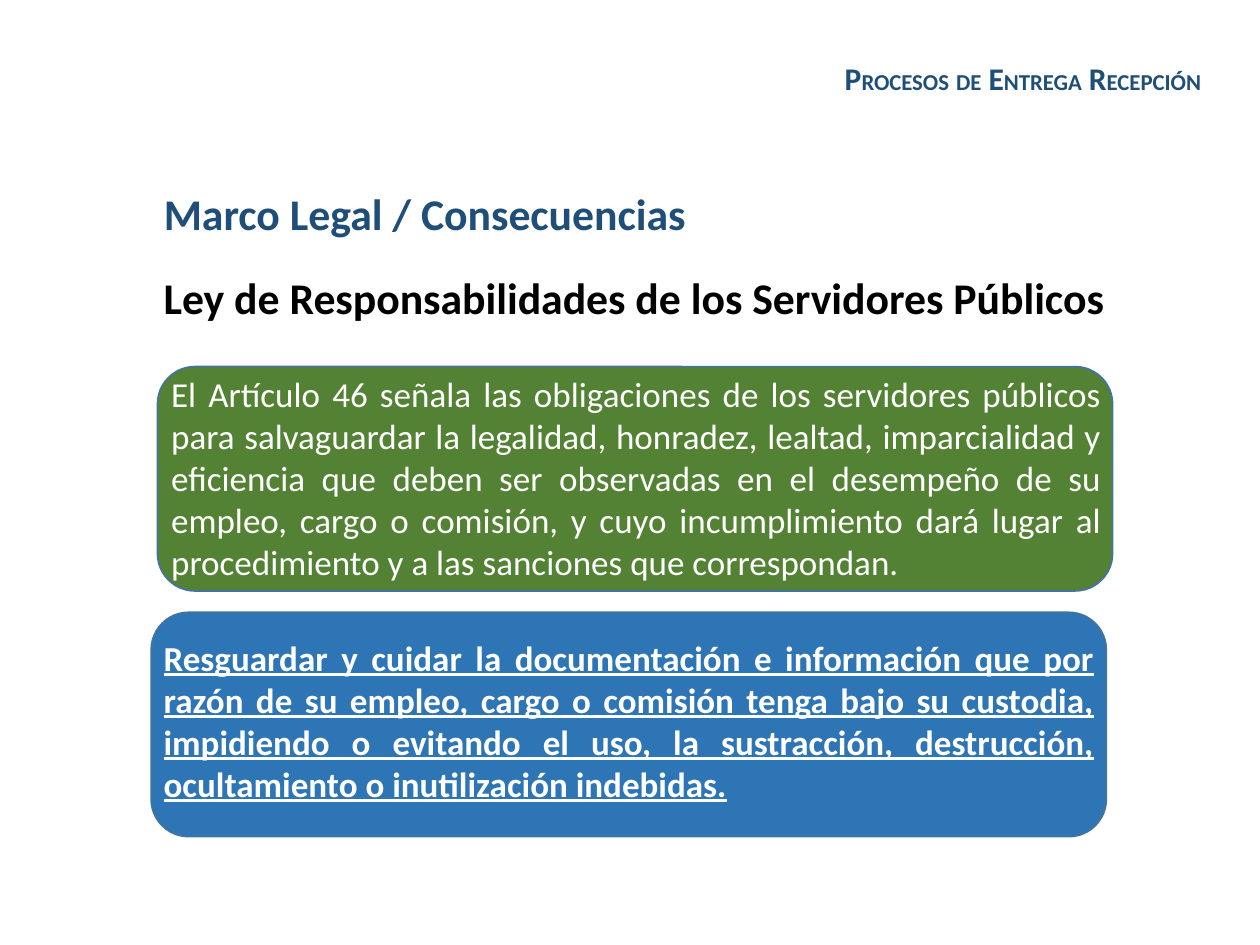
from itertools import groupby

from pptx import Presentation
from pptx.dml.color import RGBColor
from pptx.enum.shapes import MSO_SHAPE
from pptx.enum.text import MSO_ANCHOR, MSO_AUTO_SIZE, PP_ALIGN
from pptx.util import Inches, Pt

ROUNDED = MSO_SHAPE.ROUNDED_RECTANGLE
TOP = MSO_ANCHOR.TOP
FIXED = MSO_AUTO_SIZE.NONE
LEFT, RIGHT, JUSTIFY = PP_ALIGN.LEFT, PP_ALIGN.RIGHT, PP_ALIGN.JUSTIFY

WIDTH, HEIGHT = 10, 7.5
TITLE_ONLY = 5
NAVY, BLACK, WHITE = "1F4E79", "000000", "FFFFFF"
GREEN, BLUE, OUTLINE = "548235", "2E75B6", "43739E"
PANEL_W, PANEL_H = 7.58 / WIDTH, 1.78 / HEIGHT
MARGIN = 0.12

ARTICLE = (
    "El Artículo 46 señala las obligaciones de los servidores públicos para "
    "salvaguardar la legalidad, honradez, lealtad, imparcialidad y eficiencia "
    "que deben ser observadas en el desempeño de su empleo, cargo o comisión, "
    "y cuyo incumplimiento dará lugar al procedimiento y a las sanciones que "
    "correspondan."
)
DUTY = (
    "Resguardar y cuidar la documentación e información que por razón de su "
    "empleo, cargo o comisión tenga bajo su custodia, impidiendo o evitando "
    "el uso, la sustracción, destrucción, ocultamiento o inutilización "
    "indebidas."
)


def color(hex_code):
    return RGBColor.from_string(hex_code)


class LegalSlide:
    """Style and current slide; boxes are (left, top, width, height) shares."""

    font_name = "Calibri"

    def __init__(self, deck):
        self.slide = deck.slides.add_slide(deck.slide_layouts[TITLE_ONLY])

    def place(self, box):
        left, top, width, height = box
        return (Inches(left * WIDTH), Inches(top * HEIGHT),
                Inches(width * WIDTH), Inches(height * HEIGHT))

    def style(self, run, size, hex_code, bold, underline=False):
        font = run.font
        font.name, font.size = self.font_name, Pt(size)
        font.bold, font.underline = bold, underline
        font.color.rgb = color(hex_code)

    def prepare(self, frame, align):
        frame.word_wrap = True
        frame.auto_size = FIXED
        frame.vertical_anchor = TOP
        frame.paragraphs[0].alignment = align

    def title(self, box, text):
        heading = self.slide.shapes.title
        heading.left, heading.top, heading.width, heading.height = self.place(box)
        heading.text_frame.text = text
        self.prepare(heading.text_frame, LEFT)
        self.style(heading.text_frame.paragraphs[0].runs[0], 25, NAVY, True)

    def text(self, box, text, size, hex_code, align=LEFT, bold=False, underline=False):
        frame = self.slide.shapes.add_textbox(*self.place(box)).text_frame
        frame.text = text
        self.prepare(frame, align)
        self.style(frame.paragraphs[0].runs[0], size, hex_code, bold, underline)

    def small_caps(self, box, text, big, small):
        """Capitals and spaces in the big size, other letters as small capitals."""
        frame = self.slide.shapes.add_textbox(*self.place(box)).text_frame
        self.prepare(frame, RIGHT)
        for is_small, letters in groupby(text, str.islower):
            run = frame.paragraphs[0].add_run()
            run.text = "".join(letters).upper()
            self.style(run, small if is_small else big, NAVY, True)

    def panel(self, box, fill):
        panel = self.slide.shapes.add_shape(ROUNDED, *self.place(box))
        panel.shadow.inherit = False
        panel.fill.solid()
        panel.fill.fore_color.rgb = color(fill)
        panel.line.color.rgb = color(OUTLINE)
        panel.line.width = Pt(1)


def main():
    deck = Presentation()
    deck.slide_width, deck.slide_height = Inches(WIDTH), Inches(HEIGHT)
    page = LegalSlide(deck)

    page.small_caps((0.297, 0.42 / HEIGHT, 0.666, 0.4 / HEIGHT),
                    "Procesos de Entrega Recepción", 18, 13)
    page.title((MARGIN, 1.43 / HEIGHT, 0.715, 0.52 / HEIGHT),
               "Marco Legal / Consecuencias")
    page.text((MARGIN, 0.28, 0.768, 0.52 / HEIGHT),
              "Ley de Responsabilidades de los Servidores Públicos",
              25, BLACK, bold=True)

    article_top = 2.91 / HEIGHT
    page.panel((0.125, article_top, PANEL_W, PANEL_H), GREEN)
    page.text((0.126, article_top, PANEL_W, PANEL_H), ARTICLE, 20, WHITE, JUSTIFY)

    page.panel((MARGIN, 4.86 / HEIGHT, PANEL_W, PANEL_H), BLUE)
    page.text((MARGIN, 5 / HEIGHT, PANEL_W, 1.45 / HEIGHT), DUTY, 20, WHITE,
              JUSTIFY, bold=True, underline=True)

    deck.save("out.pptx")


if __name__ == "__main__":
    main()
